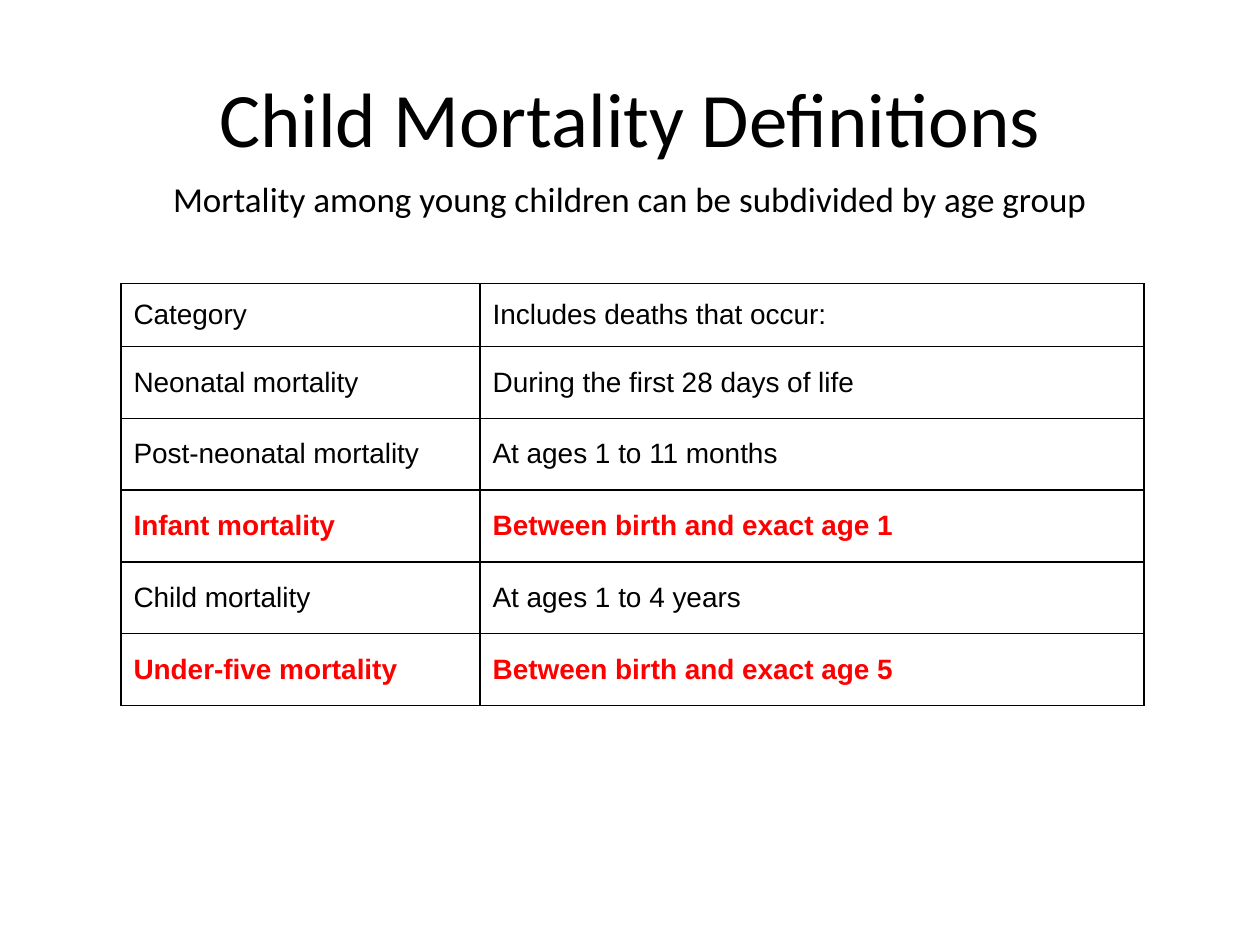
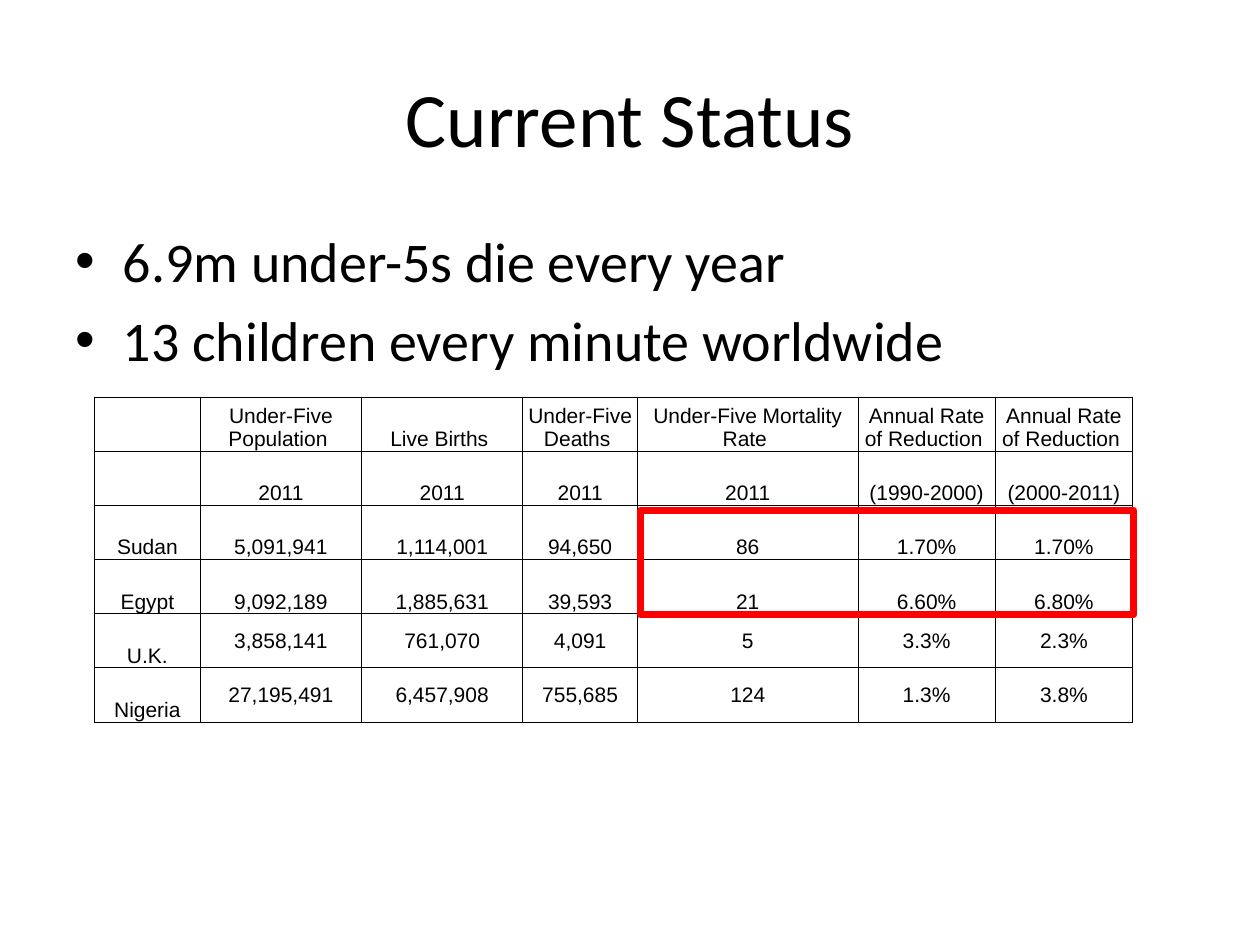
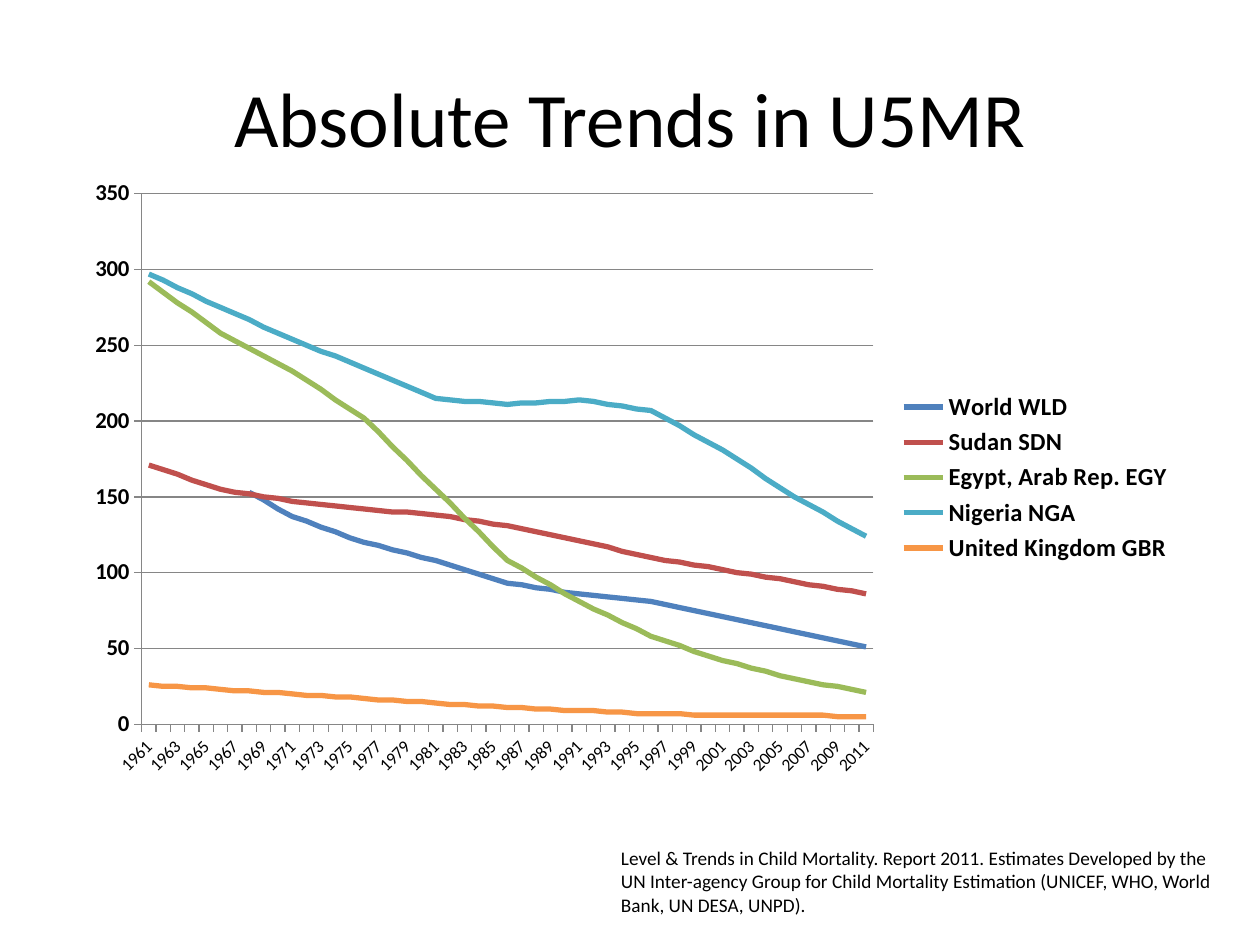
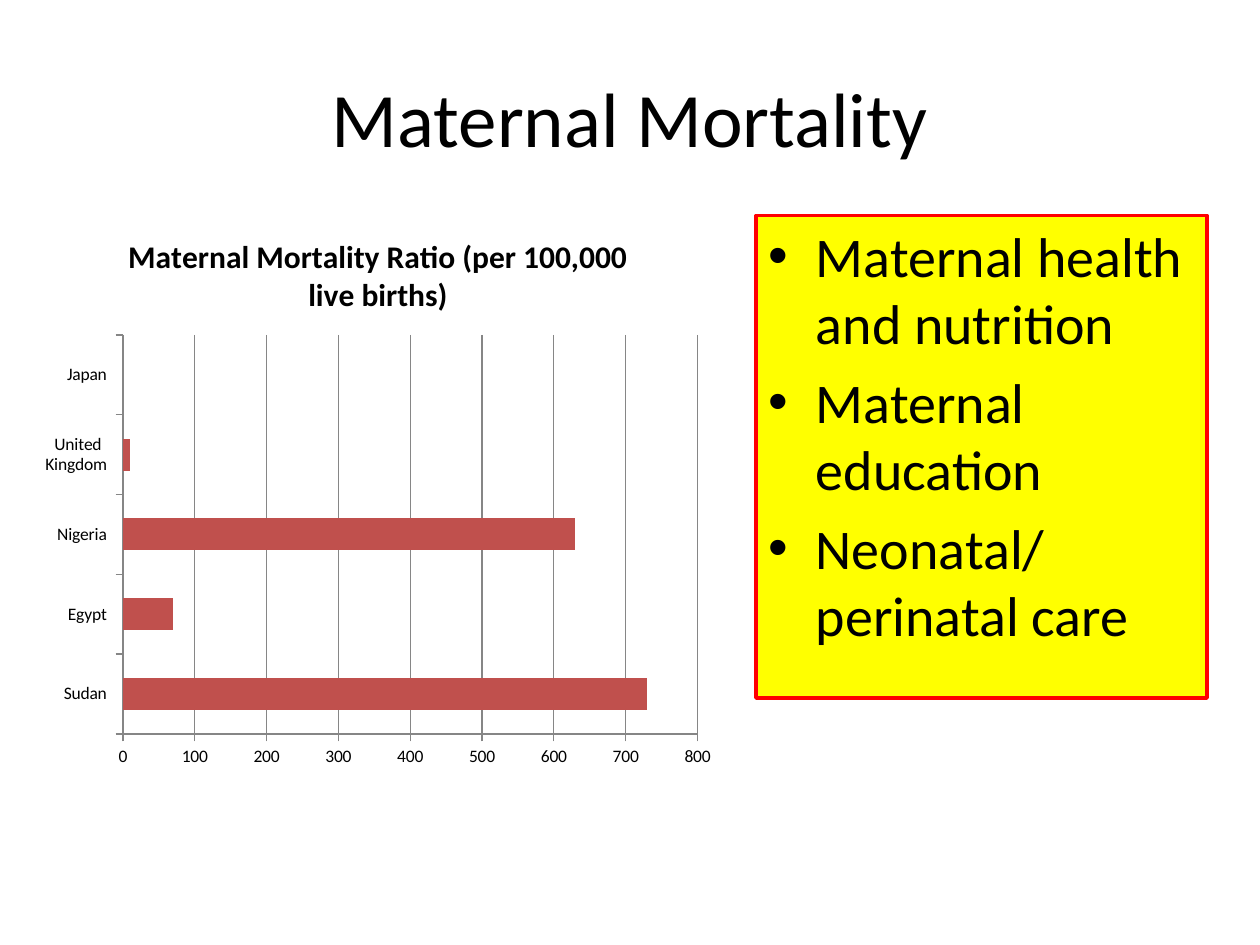
"""Build four slides on child and maternal mortality."""
import dataclasses

import lxml.etree
import pptx
import pptx.chart.data
import pptx.dml.color
import pptx.enum.chart
import pptx.enum.shapes
import pptx.enum.text
import pptx.oxml.ns
import pptx.util

Inches = pptx.util.Inches
Pt = pptx.util.Pt
qn = pptx.oxml.ns.qn
Align = pptx.enum.text.PP_ALIGN
Anchor = pptx.enum.text.MSO_ANCHOR
ChartType = pptx.enum.chart.XL_CHART_TYPE


@dataclasses.dataclass(frozen=True)
class Theme:
    text: str = "000000"
    accent: str = "FF0000"
    panel: str = "FFFF00"
    axis: str = "868686"
    bar: str = "C0504D"
    lines: tuple = ("4F81BD", "C0504D", "9BBB59", "4BACC6", "F79646")
    font: str = "Calibri"
    table_font: str = "Arial"
    title: int = 44
    body: int = 32
    subtitle: int = 20
    chart_title: int = 18
    definition: int = 16
    legend: int = 14
    value_axis: int = 13
    status: int = 12
    source: int = 11
    chart: int = 10


THEME = Theme()
TITLE_AREA = (0.5, 0.3, 9, 1.25)
TITLE_ONLY, TITLE_AND_CONTENT = 5, 1

DEFINITIONS_SUBTITLE = "Mortality among young children can be subdivided by age group"
DEFINITIONS = [
    ("Category", "Includes deaths that occur:"),
    ("Neonatal mortality", "During the first 28 days of life"),
    ("Post-neonatal mortality", "At ages 1 to 11 months"),
    ("Infant mortality", "Between birth and exact age 1"),
    ("Child mortality", "At ages 1 to 4 years"),
    ("Under-five mortality", "Between birth and exact age 5"),
]
KEY_DEFINITIONS = ("Infant mortality", "Under-five mortality")

STATUS_POINTS = ["6.9m under-5s die every year", "13 children every minute worldwide"]
STATUS = [
    ("", "Under-Five Population ", "Live Births ", "Under-Five Deaths ",
     "Under-Five Mortality Rate ", "Annual Rate of Reduction ", "Annual Rate of Reduction "),
    ("", "2011", "2011", "2011", "2011", "(1990-2000)", "(2000-2011)"),
    ("Sudan", "5,091,941", "1,114,001", "94,650", "86", "1.70%", "1.70%"),
    ("Egypt", "9,092,189", "1,885,631", "39,593", "21", "6.60%", "6.80%"),
    ("U.K.", "3,858,141", "761,070", "4,091", "5", "3.3%", "2.3%"),
    ("Nigeria", "27,195,491", "6,457,908", "755,685", "124", "1.3%", "3.8%"),
]
MIDDLE_ROWS = ("U.K.", "Nigeria")

FIRST_YEAR, LAST_YEAR, YEAR_STEP = 1961, 2011, 5
WORLD_FIRST_YEAR = 1968
YEARS = range(FIRST_YEAR, LAST_YEAR + 1)
KNOT_YEARS = list(YEARS[::YEAR_STEP])
TREND_KNOTS = {
    "World WLD": [153, 137, 120, 108, 93, 86, 81, 71, 61, 51],
    "Sudan SDN": [171, 155, 147, 142, 138, 131, 121, 110, 102, 94, 86],
    "Egypt, Arab Rep. EGY": [292, 258, 233, 202, 155, 108, 81, 58, 42, 30, 21],
    "Nigeria NGA": [297, 275, 254, 235, 215, 211, 214, 207, 181, 150, 124],
    "United Kingdom GBR": [26, 23, 20, 17, 14, 11, 9, 7, 6, 6, 5],
}
TRENDS_SOURCE = (
    "Level & Trends in Child Mortality. Report 2011. Estimates Developed by the UN "
    "Inter-agency Group for Child Mortality Estimation (UNICEF, WHO, World Bank, UN DESA, UNPD)."
)

MATERNAL_TITLE = "Maternal Mortality Ratio (per 100,000 live births)"
MATERNAL_COUNTRIES = ["Sudan ", "Egypt ", "Nigeria ", "United Kingdom ", "Japan "]
MATERNAL_RATIOS = [730, 70, 630, 10, None]
MATERNAL_POINTS = ["Maternal health and nutrition", "Maternal education", "Neonatal/ perinatal care"]


def rgb(value):
    return pptx.dml.color.RGBColor.from_string(value)


def inches(area):
    return [Inches(length) for length in area]


def place(shape, area):
    shape.left, shape.top, shape.width, shape.height = inches(area)


def style_font(font, size, bold=False, color=THEME.text, name=THEME.font):
    font.size, font.bold, font.name = Pt(size), bold, name
    font.color.rgb = rgb(color)


def add_run(paragraph, text, size, **style):
    run = paragraph.add_run()
    run.text = text
    style_font(run.font, size, **style)


def new_slide(presentation, layout, title):
    slide = presentation.slides.add_slide(presentation.slide_layouts[layout])
    place(slide.shapes.title, TITLE_AREA)
    paragraph = slide.shapes.title.text_frame.paragraphs[0]
    paragraph.alignment = Align.CENTER
    add_run(paragraph, title, THEME.title)
    return slide


def fill_body(slide, points, area):
    body = slide.placeholders[1]
    place(body, area)
    for index, point in enumerate(points):
        frame = body.text_frame
        paragraph = frame.add_paragraph() if index else frame.paragraphs[0]
        add_run(paragraph, point, THEME.body)
    return body


def add_text(slide, text, size, area):
    frame = slide.shapes.add_textbox(*inches(area)).text_frame
    frame.word_wrap = True
    paragraph = frame.paragraphs[0]
    add_run(paragraph, text, size)
    return paragraph


def border_cell(cell, width):
    properties = cell._tc.get_or_add_tcPr()
    for position, side in enumerate(("a:lnL", "a:lnR", "a:lnT", "a:lnB")):
        line = lxml.etree.Element(qn(side), w=str(Pt(width)))
        fill = lxml.etree.SubElement(line, qn("a:solidFill"))
        lxml.etree.SubElement(fill, qn("a:srgbClr"), val=THEME.text)
        properties.insert(position, line)


def add_table(slide, rows, origin, widths, heights, border, write_cell):
    area = (*origin, sum(widths), sum(heights))
    table = slide.shapes.add_table(len(rows), len(widths), *inches(area)).table
    table.first_row = table.horz_banding = False
    for column, width in zip(table.columns, widths):
        column.width = Inches(width)
    for table_row, height, texts in zip(table.rows, heights, rows):
        table_row.height = Inches(height)
        for index, (cell, text) in enumerate(zip(table_row.cells, texts)):
            cell.fill.background()
            border_cell(cell, border)
            if text:
                write_cell(cell, text, texts[0], index)


def write_definition(cell, text, category, column):
    key = category in KEY_DEFINITIONS
    cell.vertical_anchor = Anchor.MIDDLE
    paragraph = cell.text_frame.paragraphs[0]
    add_run(paragraph, text, THEME.definition, bold=key, name=THEME.table_font,
            color=THEME.accent if key else THEME.text)


def write_status(cell, text, country, column):
    middle = country in MIDDLE_ROWS and column > 0
    cell.vertical_anchor = Anchor.MIDDLE if middle else Anchor.BOTTOM
    cell.margin_left = cell.margin_right = Inches(0.06 if middle else 0.01)
    cell.margin_top = Inches(0.04 if middle else 0.01)
    cell.margin_bottom = Inches(0.04 if middle else 0)
    paragraph = cell.text_frame.paragraphs[0]
    paragraph.alignment = Align.CENTER
    add_run(paragraph, text, THEME.status, name=THEME.table_font)


def yearly_values(knots):
    knot_years = KNOT_YEARS
    if len(knots) < len(KNOT_YEARS):
        knot_years = [WORLD_FIRST_YEAR] + KNOT_YEARS[-len(knots) + 1:]
    values = [None] * (knot_years[0] - FIRST_YEAR) + [knots[0]]
    spans = zip(knot_years, knot_years[1:], knots, knots[1:])
    for start_year, end_year, start, end in spans:
        length = end_year - start_year
        values += [round(start + (end - start) * step / length) for step in range(1, length + 1)]
    return values


def add_chart(slide, kind, categories, series, area):
    data = pptx.chart.data.CategoryChartData()
    data.categories = categories
    for name, values in series.items():
        data.add_series(name, values)
    chart = slide.shapes.add_chart(kind, *inches(area), data).chart
    style_font(chart.font, THEME.chart)
    chart.has_title = chart.has_legend = False
    chart.plots[0].vary_by_categories = False
    chart.value_axis.has_major_gridlines = True
    chart.value_axis.major_gridlines.format.line.color.rgb = rgb(THEME.axis)
    for axis in (chart.category_axis, chart.value_axis):
        axis.major_tick_mark = pptx.enum.chart.XL_TICK_MARK.OUTSIDE
        axis.format.line.color.rgb = rgb(THEME.axis)
        style_font(axis.tick_labels.font, THEME.chart)
    return chart


def build_definitions(presentation):
    slide = new_slide(presentation, TITLE_ONLY, "Child Mortality Definitions")
    subtitle = add_text(slide, DEFINITIONS_SUBTITLE, THEME.subtitle, (0, 1.33, 10, 0.58))
    subtitle.alignment = Align.CENTER
    subtitle.line_spacing = 1.1
    subtitle.space_after = Pt(0.3 * THEME.subtitle)
    add_table(slide, DEFINITIONS, (0.96, 2.25), [2.85, 5.27], [0.5] + [0.57] * 5, 1, write_definition)


def build_status(presentation):
    slide = new_slide(presentation, TITLE_AND_CONTENT, "Current Status")
    fill_body(slide, STATUS_POINTS, (0.5, 1.75, 9, 4.5))
    widths = [0.84, 1.28, 1.28, 0.91, 1.75, 1.09, 1.09]
    add_table(slide, STATUS, (0.75, 3.15), widths, [0.43] * len(STATUS), 0.5, write_status)
    highlight = slide.shapes.add_shape(
        pptx.enum.shapes.MSO_SHAPE.RECTANGLE, *inches((5.08, 4.05, 3.92, 0.83)))
    highlight.shadow.inherit = False
    highlight.fill.background()
    highlight.line.color.rgb = rgb(THEME.accent)
    highlight.line.width = Pt(4)


def build_trends(presentation):
    slide = new_slide(presentation, TITLE_ONLY, "Absolute Trends in U5MR")
    trends = {name: yearly_values(knots) for name, knots in TREND_KNOTS.items()}
    chart = add_chart(slide, ChartType.LINE, [str(year) for year in YEARS], trends,
                      (0.58, 1.33, 8.83, 4.92))
    for series, color in zip(chart.plots[0].series, THEME.lines):
        series.smooth = False
        series.format.line.color.rgb = rgb(color)
        series.format.line.width = Pt(3)
    style_font(chart.value_axis.tick_labels.font, THEME.value_axis, bold=True)
    chart.category_axis._element.find(qn("c:txPr")).find(qn("a:bodyPr")).set("rot", "-2700000")
    chart.has_legend = True
    chart.legend.position = pptx.enum.chart.XL_LEGEND_POSITION.RIGHT
    chart.legend.include_in_layout = False
    style_font(chart.legend.font, THEME.legend, bold=True)
    add_text(slide, TRENDS_SOURCE, THEME.source, (4.83, 6.67, 5, 0.66))


def build_maternal(presentation):
    slide = new_slide(presentation, TITLE_AND_CONTENT, "Maternal Mortality")
    panel = fill_body(slide, MATERNAL_POINTS, (6, 1.71, 3.58, 3.83))
    panel.fill.solid()
    panel.fill.fore_color.rgb = rgb(THEME.panel)
    panel.line.color.rgb = rgb(THEME.accent)
    panel.line.width = Pt(2)
    chart = add_chart(slide, ChartType.BAR_CLUSTERED, MATERNAL_COUNTRIES,
                      {MATERNAL_TITLE: MATERNAL_RATIOS}, (0.25, 1.67, 5.5, 4.5))
    chart.has_title = True
    add_run(chart.chart_title.text_frame.paragraphs[0], MATERNAL_TITLE, THEME.chart_title, bold=True)
    chart.chart_title.include_in_layout = False
    plot = chart.plots[0]
    plot.gap_width = 150
    plot.series[0].format.fill.solid()
    plot.series[0].format.fill.fore_color.rgb = rgb(THEME.bar)


def main():
    presentation = pptx.Presentation()
    presentation.slide_width, presentation.slide_height = Inches(10), Inches(7.5)
    for build in (build_definitions, build_status, build_trends, build_maternal):
        build(presentation)
    presentation.save("out.pptx")


if __name__ == "__main__":
    main()
